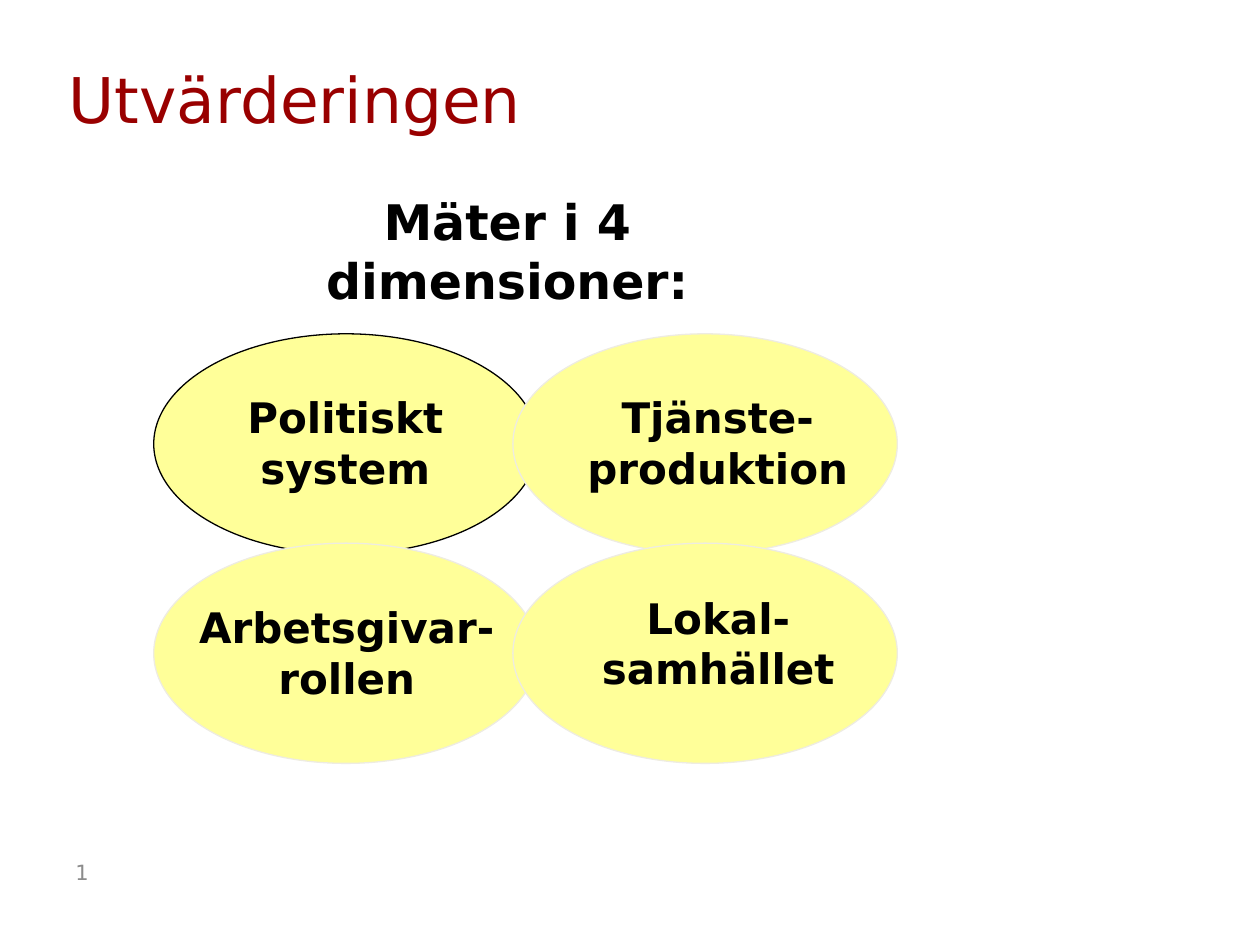
import pptx
import pptx.util
import pptx.dml.color
import pptx.enum.shapes
import pptx.enum.text

Cm = pptx.util.Cm
Pt = pptx.util.Pt
RGBColor = pptx.dml.color.RGBColor
ALIGN = pptx.enum.text.PP_ALIGN
ANCHOR = pptx.enum.text.MSO_ANCHOR

RED = RGBColor(0x99, 0x00, 0x00)
GREY = RGBColor(0x8C, 0x8C, 0x8C)
BLACK = RGBColor(0x00, 0x00, 0x00)
YELLOW = RGBColor(0xFF, 0xFF, 0x99)
CREAM = RGBColor(0xEE, 0xEC, 0xE1)


def add_text(shapes, text, place, size, color=BLACK, bold=True,
             align=ALIGN.CENTER, anchor=ANCHOR.TOP):
    """Add a wrapped text box; place is left, top, width, height in cm."""
    box = shapes.add_textbox(*[Cm(n) for n in place])
    frame = box.text_frame
    frame.word_wrap = True
    frame.vertical_anchor = anchor
    para = frame.paragraphs[0]
    para.alignment = align
    for i, line in enumerate(text.split("\n")):
        if i:
            para.add_line_break()
        run = para.add_run()
        run.text = line
        run.font.name = "DejaVu Sans"
        run.font.size = Pt(size)
        run.font.bold = bold
        run.font.color.rgb = color


deck = pptx.Presentation()
deck.slide_width = Cm(25.4)
deck.slide_height = Cm(19.05)
slide = deck.slides.add_slide(deck.slide_layouts[6])

add_text(slide.shapes, "1", (1.27, 17.07, 3.89, 1.02), 12, GREY, False,
         ALIGN.LEFT, ANCHOR.MIDDLE)
add_text(slide.shapes, "Utvärderingen", (1.14, 0.53, 16.94, 2.34), 36, RED,
         False, ALIGN.LEFT, ANCHOR.BOTTOM)

# Four overlapping ovals, two by two
group = slide.shapes.add_group_shape()
for i in range(4):
    row, col = divmod(i, 2)
    oval = group.shapes.add_shape(
        pptx.enum.shapes.MSO_SHAPE.OVAL,
        Cm(3.1 + 7.24 * col), Cm(6.73 + 4.22 * row), Cm(7.75), Cm(4.44))
    oval.shadow.inherit = False
    oval.fill.solid()
    oval.fill.fore_color.rgb = YELLOW
    oval.line.color.rgb = CREAM if i else BLACK
    oval.line.width = Pt(0.75)

labels = [
    ("Politiskt system", (4.09, 7.77, 5.74, 2.29)),
    ("Tjänste-produktion", (10.85, 7.77, 7.24, 2.31)),
    ("Arbetsgivar-\nrollen", (3.61, 12.01, 6.76, 2.31)),
    ("Lokal-samhället", (11.61, 11.81, 5.74, 2.29)),
]
for text, place in labels:
    add_text(group.shapes, text, place, 24)

add_text(slide.shapes, "Mäter i 4 dimensioner:", (4.09, 3.73, 12.27, 1.45), 28)

deck.save("out.pptx")
